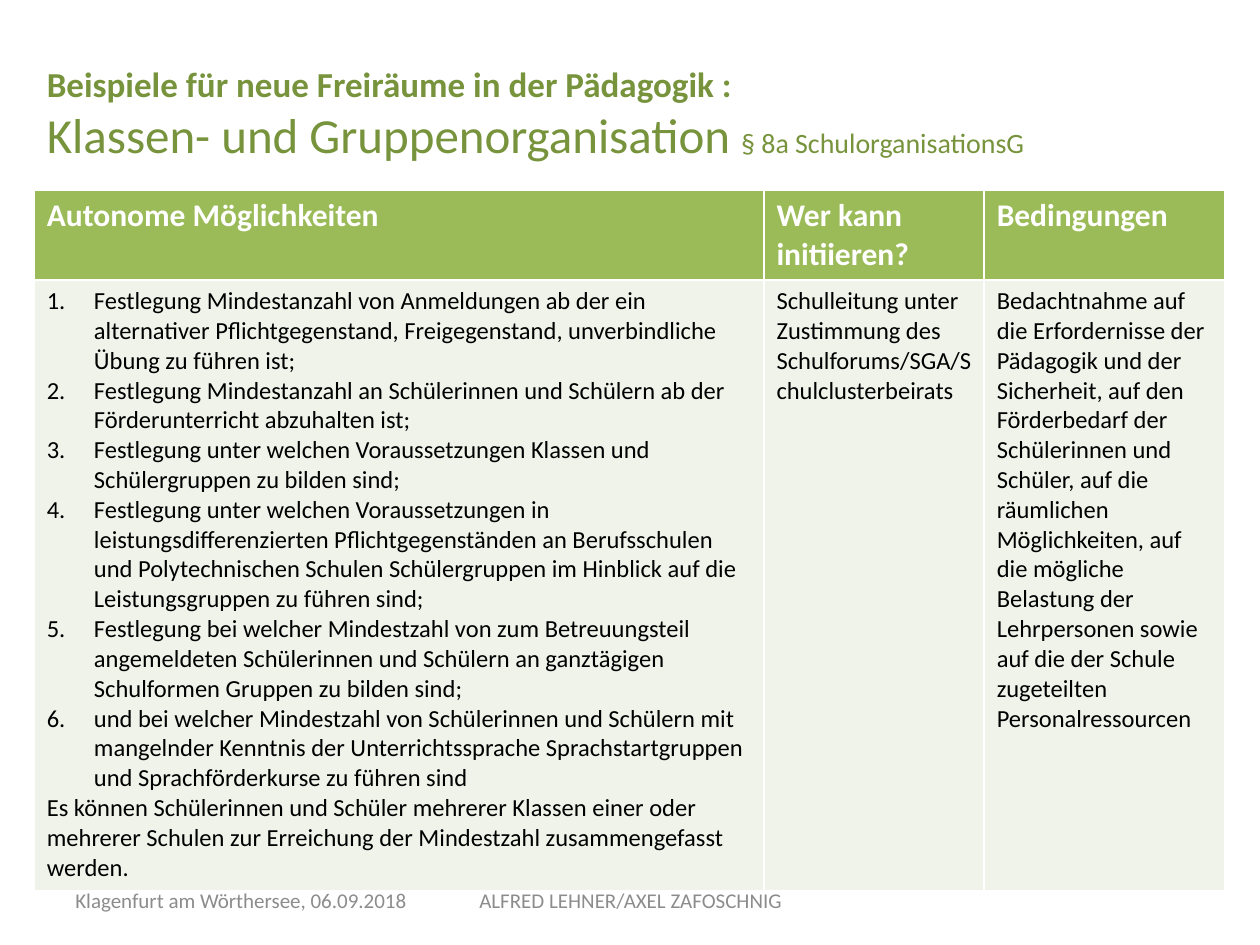
from copy import deepcopy
from dataclasses import dataclass

from lxml.etree import SubElement
from pptx import Presentation
from pptx.dml.color import RGBColor
from pptx.enum.text import MSO_ANCHOR, MSO_AUTO_SIZE, PP_ALIGN
from pptx.oxml.ns import qn
from pptx.util import Cm, Pt

COLORS = {
    "title": "77933C",
    "head": "9BBB59",
    "body": "EFF3EA",
    "white": "FFFFFF",
    "black": "000000",
    "gray": "8C8C8C",
}
INDENT = Cm(0.95)


@dataclass
class Column:
    width: float
    head: str
    items: tuple[str, ...]
    closing: str


@dataclass
class Footer:
    left: float
    width: float
    text: str
    align: PP_ALIGN


COLUMNS = [
    Column(14.71, "Autonome Möglichkeiten", (
        "Festlegung Mindestanzahl von Anmeldungen ab der ein alternativer "
        "Pflichtgegenstand, Freigegenstand, unverbindliche Übung zu führen ist;",
        "Festlegung Mindestanzahl an Schülerinnen und Schülern ab der "
        "Förderunterricht abzuhalten ist;",
        "Festlegung unter welchen Voraussetzungen Klassen und Schülergruppen "
        "zu bilden sind;",
        "Festlegung unter welchen Voraussetzungen in leistungsdifferenzierten "
        "Pflichtgegenständen an Berufsschulen und Polytechnischen Schulen "
        "Schülergruppen im Hinblick auf die Leistungsgruppen zu führen sind;",
        "Festlegung bei welcher Mindestzahl von zum Betreuungsteil angemeldeten "
        "Schülerinnen und Schülern an ganztägigen Schulformen Gruppen zu bilden sind;",
        "und bei welcher Mindestzahl von Schülerinnen und Schülern mit mangelnder "
        "Kenntnis der Unterrichtssprache Sprachstartgruppen und Sprachförderkurse "
        "zu führen sind",
    ), "Es können Schülerinnen und Schüler mehrerer Klassen einer oder mehrerer "
       "Schulen zur Erreichung der Mindestzahl zusammengefasst werden."),
    Column(4.44, "Wer kann initiieren?", (),
           "Schulleitung unter Zustimmung des Schulforums/SGA/Schulclusterbeirats"),
    Column(4.85, "Bedingungen", (),
           "Bedachtnahme auf die Erfordernisse der Pädagogik und der Sicherheit, "
           "auf den Förderbedarf der Schülerinnen und Schüler, auf die räumlichen "
           "Möglichkeiten, auf die mögliche Belastung der Lehrpersonen sowie auf "
           "die der Schule zugeteilten Personalressourcen"),
]
ROWS = [1.68, 12.32]
FOOTERS = [
    Footer(1.27, 7.42, "Klagenfurt am Wörthersee, 06.09.2018", PP_ALIGN.LEFT),
    Footer(8.69, 8.05, "ALFRED LEHNER/AXEL ZAFOSCHNIG", PP_ALIGN.CENTER),
]


def style(font, size: int, color: str, bold: bool = False) -> None:
    font.name = "Calibri"
    font.size = Pt(size)
    font.bold = bold
    font.color.rgb = RGBColor.from_string(COLORS[color])


def number(para) -> None:
    props = para._p.get_or_add_pPr()
    props.set("marL", str(INDENT))
    props.set("indent", str(-INDENT))
    SubElement(props, qn("a:buFont"), typeface="+mj-lt")
    SubElement(props, qn("a:buAutoNum"), type="arabicPeriod")


def fill(cell, color: str) -> None:
    cell.fill.solid()
    cell.fill.fore_color.rgb = RGBColor.from_string(COLORS[color])


def draw_title(slide) -> None:
    title = slide.shapes.title
    title.left, title.top = Cm(0.69), Cm(1.14)
    title.width, title.height = Cm(22.76), Cm(2.51)
    frame = title.text_frame
    frame.auto_size = MSO_AUTO_SIZE.NONE
    frame.vertical_anchor = MSO_ANCHOR.TOP
    para = frame.paragraphs[0]
    para.alignment = PP_ALIGN.LEFT

    def add(text: str, size: int, bold: bool = False):
        run = para.add_run()
        run.text = text
        style(run.font, size, "title", bold)
        return run

    first = add("Beispiele für neue Freiräume in der Pädagogik :", 20, True)
    para.add_line_break()
    para._p[-1].append(deepcopy(first._r.rPr))
    add("Klassen- und Gruppenorganisation ", 28)
    add("§ 8a SchulorganisationsG", 16)


def draw_table(slide, columns: list[Column]) -> None:
    width = sum(col.width for col in columns)
    table = slide.shapes.add_table(
        len(ROWS), len(columns), Cm(0.69), Cm(3.84), Cm(width), Cm(sum(ROWS))
    ).table
    for row, height in zip(table.rows, ROWS):
        row.height = Cm(height)
    for index, col in enumerate(columns):
        table.columns[index].width = Cm(col.width)
        head, body = table.cell(0, index), table.cell(1, index)
        fill(head, "head")
        head.text = col.head
        style(head.text_frame.paragraphs[0].font, 18, "white", True)
        fill(body, "body")
        body.text = "\n".join((*col.items, col.closing))
        for place, para in enumerate(body.text_frame.paragraphs):
            if place < len(col.items):
                number(para)
            style(para.font, 14, "black")


def draw_footer(slide, foot: Footer) -> None:
    box = slide.shapes.add_textbox(Cm(foot.left), Cm(17.65), Cm(foot.width), Cm(1.01))
    frame = box.text_frame
    frame.word_wrap = True
    frame.vertical_anchor = MSO_ANCHOR.MIDDLE
    para = frame.paragraphs[0]
    para.text = foot.text
    para.alignment = foot.align
    style(para.font, 12, "gray")


def main() -> None:
    deck = Presentation()
    deck.slide_width, deck.slide_height = Cm(25.4), Cm(19.05)
    slide = deck.slides.add_slide(deck.slide_layouts[5])
    draw_title(slide)
    draw_table(slide, COLUMNS)
    for foot in FOOTERS:
        draw_footer(slide, foot)
    deck.save("out.pptx")


if __name__ == "__main__":
    main()
